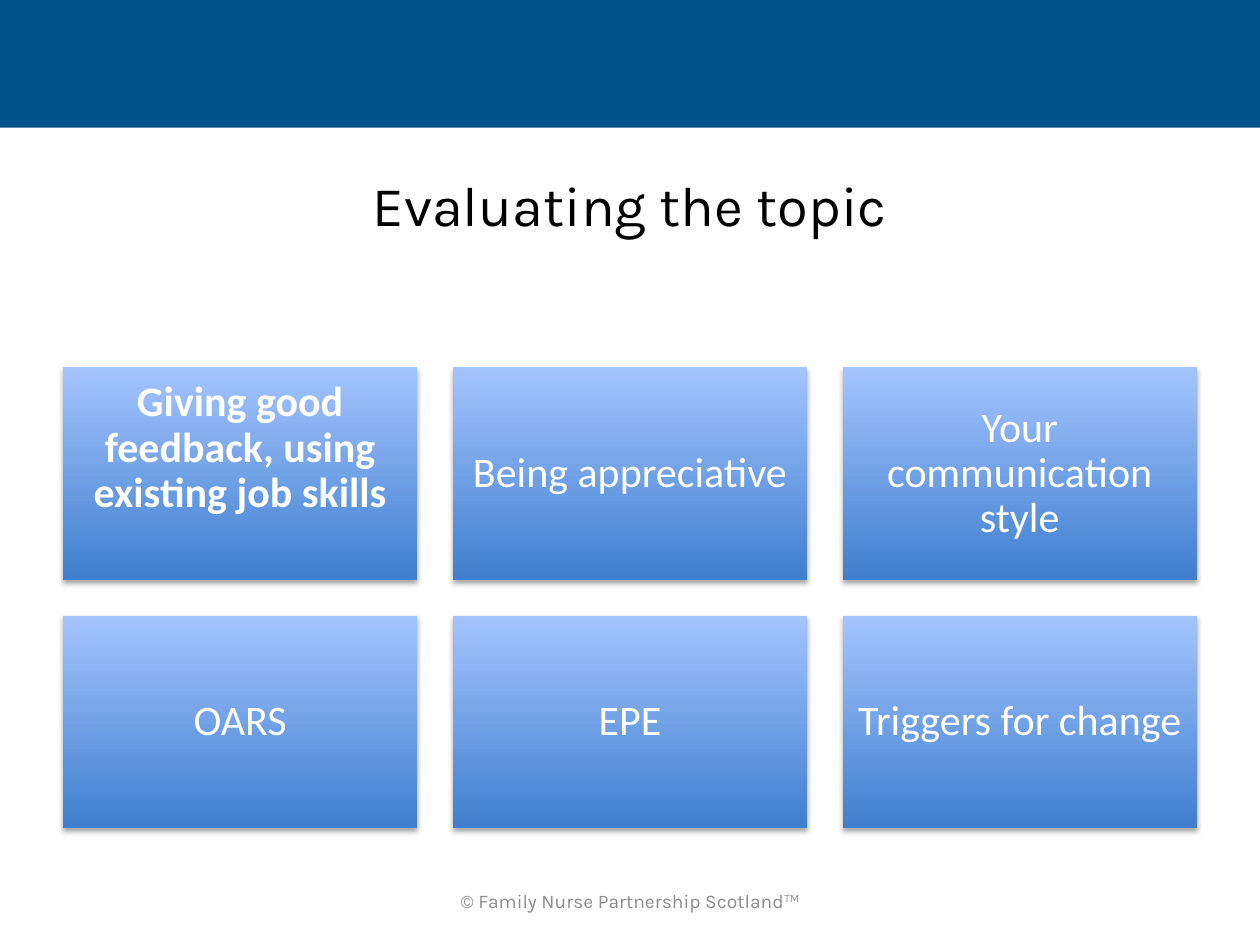
from dataclasses import dataclass

from lxml.etree import SubElement
from pptx import Presentation
from pptx.dml.color import RGBColor
from pptx.enum.shapes import MSO_SHAPE
from pptx.enum.text import MSO_ANCHOR, PP_ALIGN
from pptx.oxml.ns import qn
from pptx.util import Pt


@dataclass(frozen=True)
class Theme:
    band: str = "005488"
    low: str = "3F7FCE"
    high: str = "A4C4FF"
    ink: str = "000000"
    pale: str = "FFFFFF"
    grey: str = "8C8C8C"
    shade: str = "000000"
    head: str = "Karla"
    body: str = "Calibri"
    big: int = 32
    mid: int = 24
    small: int = 11


THEME = Theme()
WIDE, HIGH = 720, 540
EDGE, TOP = 36, 210
CARD_W, CARD_H, GAP = 202.5, 121.5, 20.25
PAD = 7.2
SPARE = 29  # one line of room left below the lead card's text

TOPICS = [
    ["Giving good feedback, using existing job skills",
     "Being appreciative", "Your communication style"],
    ["OARS", "EPE", "Triggers for change"],
]


def apply(item, values):
    for name, value in values.items():
        setattr(item, name, value)


def place(shape, left, top, width, height):
    apply(shape, {"left": Pt(left), "top": Pt(top),
                  "width": Pt(width), "height": Pt(height)})


def add_run(par, text, face, size, color, bold=False):
    run = par.add_run()
    run.text = text
    apply(run.font, {"name": face, "size": Pt(size), "bold": bold})
    run.font.color.rgb = RGBColor.from_string(color)
    return run


def add_box(slide, left, top, width, height):
    box = slide.shapes.add_shape(
        MSO_SHAPE.RECTANGLE, Pt(left), Pt(top), Pt(width), Pt(height))
    box.shadow.inherit = False
    box.line.fill.background()
    return box


def add_shadow(shape):
    effects = shape._element.spPr.find(qn("a:effectLst"))
    outer = SubElement(effects, qn("a:outerShdw"), blurRad=str(Pt(3.1)),
                       dist=str(Pt(1.8)), dir="5400000", rotWithShape="0")
    color = SubElement(outer, qn("a:srgbClr"), val=THEME.shade)
    SubElement(color, qn("a:alpha"), val="35000")


def add_band(slide):
    band = add_box(slide, 0, 0, WIDE, 73)
    band.fill.solid()
    band.fill.fore_color.rgb = RGBColor.from_string(THEME.band)


def set_title(slide, text):
    title = slide.shapes.title
    place(title, EDGE, 93.6, WIDE - 2 * EDGE, 90)
    apply(title.text_frame, {"vertical_anchor": MSO_ANCHOR.TOP,
                             "word_wrap": True})
    par = title.text_frame.paragraphs[0]
    par.alignment = PP_ALIGN.CENTER
    add_run(par, text, THEME.head, THEME.big, THEME.ink)


def add_card(slide, row, col, text, lead):
    card = add_box(slide, EDGE + col * (CARD_W + GAP),
                   TOP + row * (CARD_H + GAP), CARD_W, CARD_H)
    card.fill.gradient()
    card.fill.gradient_angle = 90
    for stop, color in zip(card.fill.gradient_stops, (THEME.low, THEME.high)):
        stop.color.rgb = RGBColor.from_string(color)
    add_shadow(card)
    apply(card.text_frame, {
        "word_wrap": True, "vertical_anchor": MSO_ANCHOR.MIDDLE,
        "margin_left": Pt(PAD), "margin_right": Pt(PAD),
        "margin_top": Pt(PAD),
        "margin_bottom": Pt(PAD + SPARE if lead else PAD)})
    par = card.text_frame.paragraphs[0]
    apply(par, {"alignment": PP_ALIGN.CENTER, "line_spacing": 0.9})
    add_run(par, text, THEME.body, THEME.mid, THEME.pale, lead)


def add_footer(slide, text, mark):
    """Add the credit line, with its mark raised."""
    box = slide.shapes.add_textbox(Pt(246), Pt(500.4), Pt(228), Pt(28.8))
    apply(box.text_frame, {"word_wrap": True,
                           "vertical_anchor": MSO_ANCHOR.MIDDLE})
    par = box.text_frame.paragraphs[0]
    par.alignment = PP_ALIGN.CENTER
    style = THEME.head, THEME.small, THEME.grey
    add_run(par, text, *style)
    sign = add_run(par, mark, *style)
    sign.font._element.set("baseline", "30000")


def main():
    deck = Presentation()
    apply(deck, {"slide_width": Pt(WIDE), "slide_height": Pt(HIGH)})
    slide = deck.slides.add_slide(deck.slide_layouts[5])
    add_band(slide)
    set_title(slide, "Evaluating the topic")
    add_footer(slide, "© Family Nurse Partnership Scotland", "TM")
    for row, line in enumerate(TOPICS):
        for col, text in enumerate(line):
            add_card(slide, row, col, text, lead=row == col == 0)
    deck.save("out.pptx")


if __name__ == "__main__":
    main()
